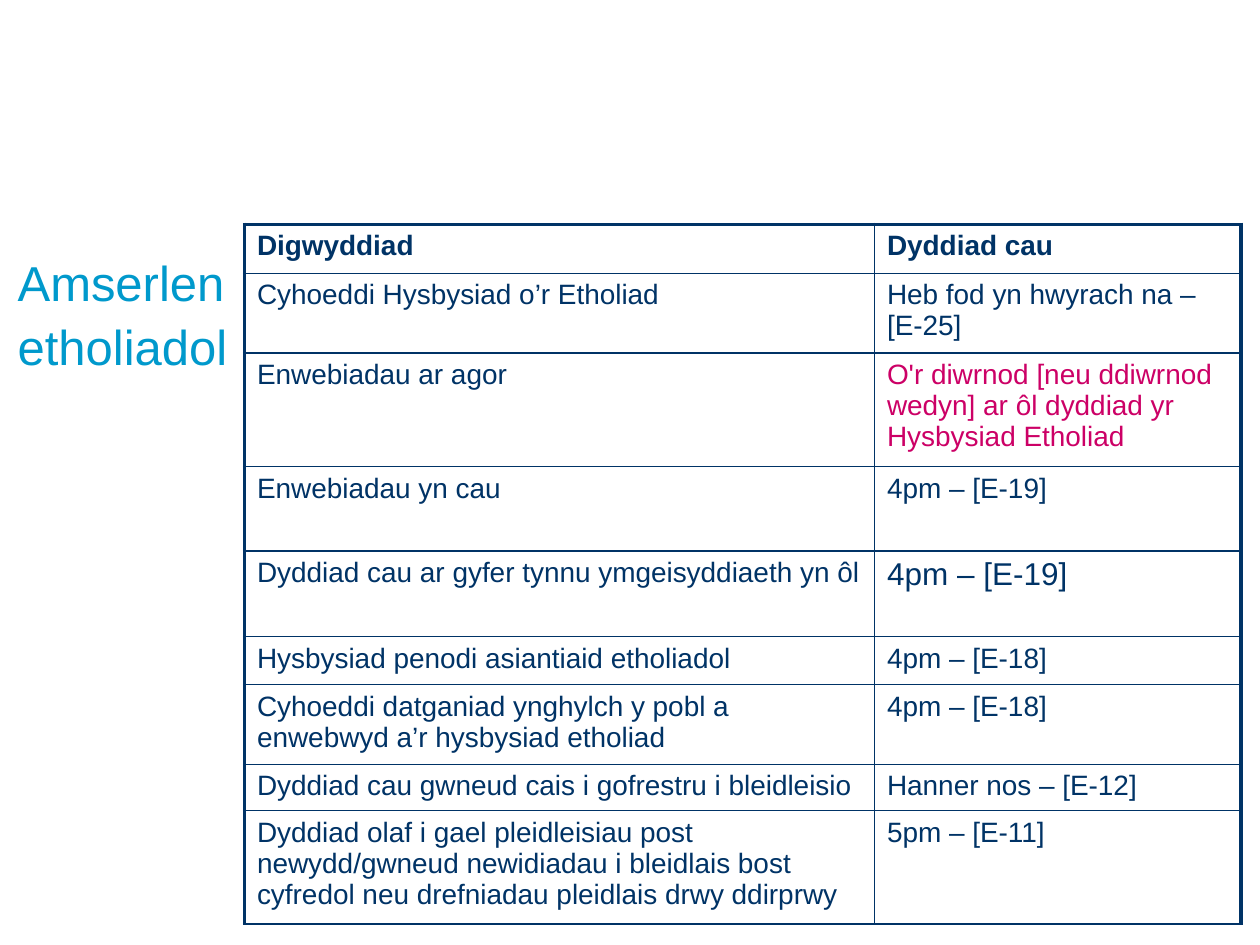
from dataclasses import dataclass

from lxml.etree import SubElement
from pptx import Presentation
from pptx.dml.color import RGBColor
from pptx.oxml.ns import qn
from pptx.util import Inches, Pt


@dataclass(frozen=True)
class Theme:
    font: str = "Arial"
    title: str = "0099CC"
    navy: str = "003366"
    pink: str = "CC0066"
    title_size: int = 28
    body_size: int = 16
    large_size: int = 18
    thin: float = 1
    thick: float = 2.25


theme = Theme()


def style_runs(p, size, color, bold=False):
    for r in p.runs:
        r.font.name = theme.font
        r.font.size = Pt(size)
        r.font.bold = bold
        r.font.color.rgb = RGBColor.from_string(color)


def set_borders(cell, widths):
    """Draw left, right, top and bottom borders, with widths in points."""
    tc_pr = cell._tc.get_or_add_tcPr()
    for i, (side, width) in enumerate(zip(("lnL", "lnR", "lnT", "lnB"), widths)):
        ln = SubElement(tc_pr, qn(f"a:{side}"), w=str(Pt(width)))
        fill = SubElement(ln, qn("a:solidFill"))
        SubElement(fill, qn("a:srgbClr"), val=theme.navy)
        tc_pr.insert(i, ln)  # borders come before the cell fill


prs = Presentation()
prs.slide_width, prs.slide_height = Inches(10), Inches(7.5)
s = prs.slides.add_slide(prs.slide_layouts[6])

# Title
tb = s.shapes.add_textbox(Inches(0.14), Inches(1.97), Inches(2.75), Inches(4.67))
tf = tb.text_frame
tf.word_wrap = True
tf.margin_left = tf.margin_right = tf.margin_top = tf.margin_bottom = 0
tf.text = "Amserlen etholiadol"
tf.paragraphs[0].line_spacing = 1.08
style_runs(tf.paragraphs[0], theme.title_size, theme.title)

# Timetable: row height, event, deadline
timetable = [
    (0.39, "Digwyddiad", "Dyddiad cau"),
    (0.55, "Cyhoeddi Hysbysiad o’r Etholiad", "Heb fod yn hwyrach na – [E-25]"),
    (0.88, "Enwebiadau ar agor",
     "O'r diwrnod [neu ddiwrnod wedyn] ar ôl dyddiad yr Hysbysiad Etholiad"),
    (0.67, "Enwebiadau yn cau", "4pm – [E-19]"),
    (0.68, "Dyddiad cau ar gyfer tynnu ymgeisyddiaeth yn ôl", "4pm – [E-19]"),
    (0.38, "Hysbysiad penodi asiantiaid etholiadol", "4pm – [E-18]"),
    (0.62, "Cyhoeddi datganiad ynghylch y pobl a enwebwyd a’r hysbysiad etholiad",
     "4pm – [E-18]"),
    (0.36, "Dyddiad cau gwneud cais i gofrestru i bleidleisio", "Hanner nos – [E-12]"),
    (0.88, "Dyddiad olaf i gael pleidleisiau post newydd/gwneud newidiadau i "
     "bleidlais bost cyfredol neu drefniadau pleidlais drwy ddirprwy", "5pm – [E-11]"),
]
deadline_colors = {2: theme.pink}
deadline_sizes = {4: theme.large_size}

table = s.shapes.add_table(len(timetable), 2, Inches(1.94), Inches(1.78),
                           Inches(7.91), Inches(5.41)).table
table.first_row = table.horz_banding = False
for column, width in zip(table.columns, (5, 2.91)):
    column.width = Inches(width)

for row, (height, *texts) in enumerate(timetable):
    table.rows[row].height = Inches(height)
    for col, text in enumerate(texts):
        cell = table.cell(row, col)
        cell.fill.background()
        cell.margin_left = cell.margin_right = Inches(0.1)
        cell.margin_top = cell.margin_bottom = Inches(0.05)
        cell.text_frame.text = text
        size, color = theme.body_size, theme.navy
        if col == 1:
            size = deadline_sizes.get(row, size)
            color = deadline_colors.get(row, color)
        style_runs(cell.text_frame.paragraphs[0], size, color, bold=row == 0)
        outer_edges = (col == 0, col == 1, row == 0, False)
        set_borders(cell, [theme.thick if outer else theme.thin for outer in outer_edges])

prs.save("out.pptx")
